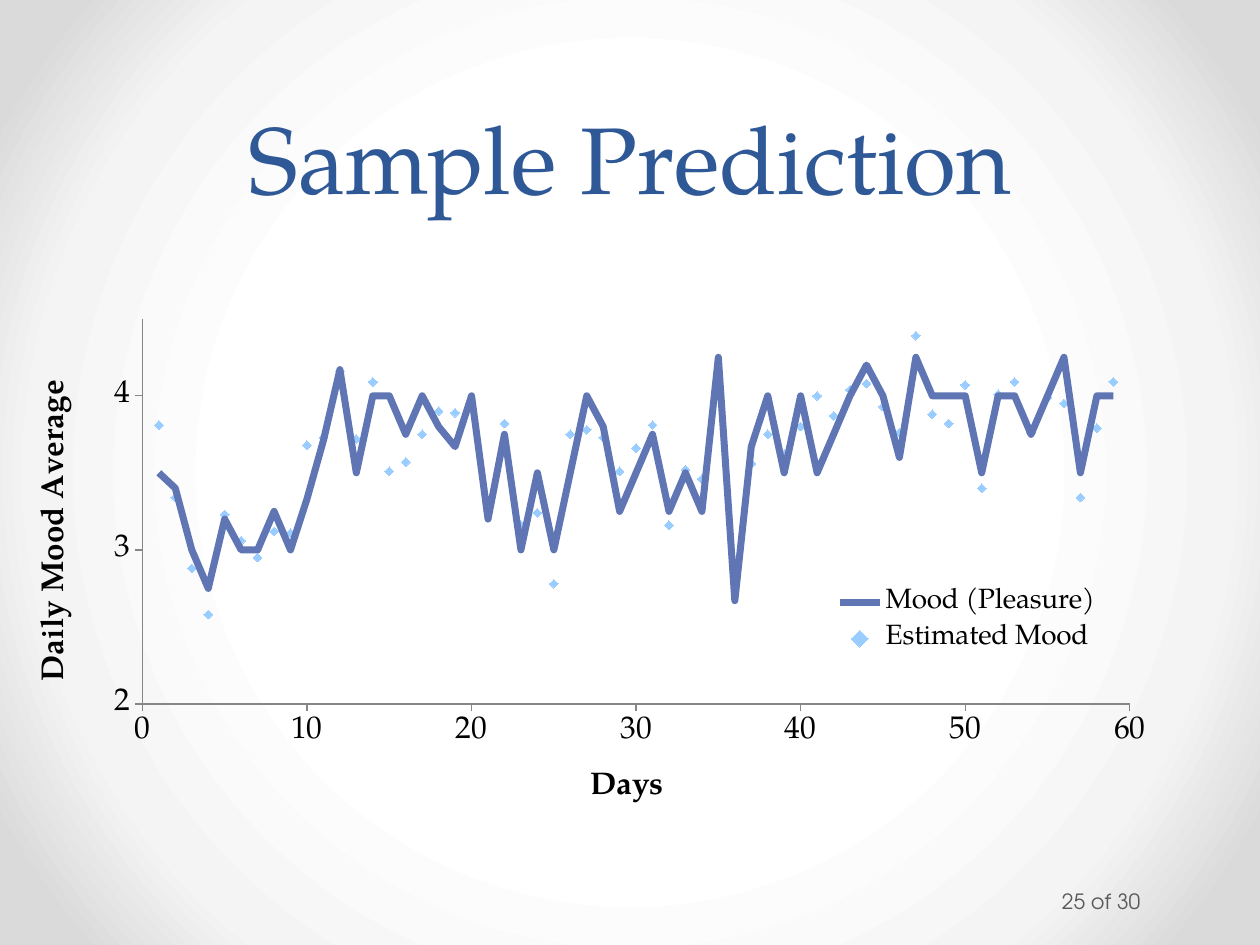
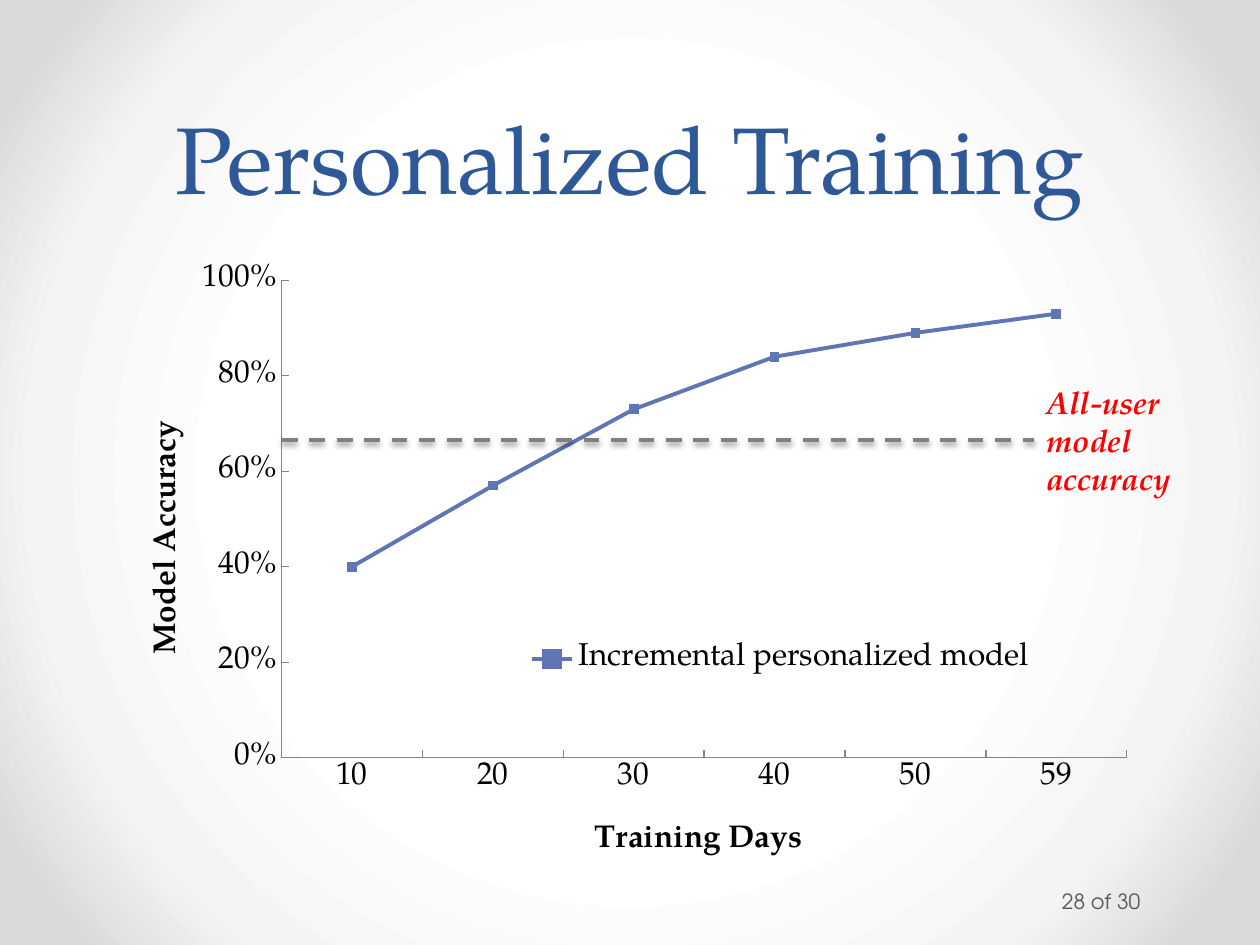
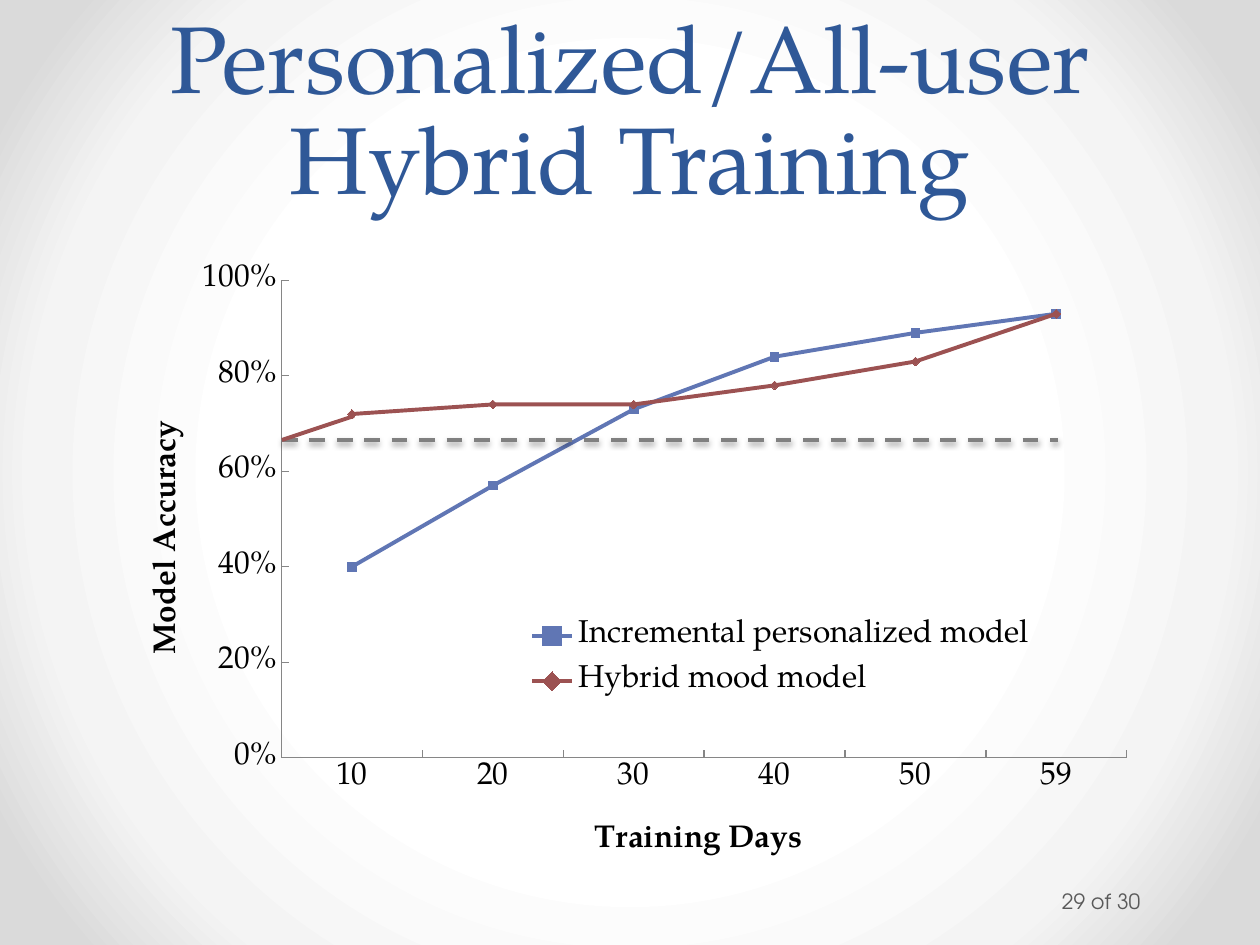
from lxml import etree
from pptx import Presentation
from pptx.chart.data import CategoryChartData, XyChartData
from pptx.dml.color import RGBColor
from pptx.enum.chart import (XL_CHART_TYPE as ChartType, XL_LEGEND_POSITION as LegendSide,
                             XL_MARKER_STYLE as Marker, XL_TICK_MARK as Tick)
from pptx.enum.dml import MSO_LINE
from pptx.enum.shapes import MSO_CONNECTOR
from pptx.enum.text import MSO_ANCHOR as Anchor, PP_ALIGN as Align
from pptx.oxml import parse_xml
from pptx.oxml.ns import nsdecls, qn
from pptx.util import Emu, Pt

PX = 914400 / 126
SERIF, SANS = "TeX Gyre Pagella", "TeX Gyre Adventor"
TITLE_BLUE = RGBColor(0x2F, 0x58, 0x97)
SERIES_BLUE = RGBColor(0x60, 0x76, 0xB4)
SERIES_RED = RGBColor(0x9C, 0x52, 0x52)
SKY = RGBColor(0x99, 0xCC, 0xFF)
RED = RGBColor(0xFF, 0x00, 0x00)
BLACK = RGBColor(0x00, 0x00, 0x00)
AXIS_GREY = RGBColor(0x86, 0x86, 0x86)
DASH_GREY = RGBColor(0x80, 0x80, 0x80)
PAGE_GREY = RGBColor(0x59, 0x59, 0x59)


def add_text(slide, box, text, font_name, size, color, anchor=Anchor.TOP):
    """Add a text box at box (left, top, width, height in px)."""
    frame = slide.shapes.add_textbox(*[Emu(round(n * PX)) for n in box]).text_frame
    frame.word_wrap = True
    frame.vertical_anchor = anchor
    paragraph = frame.paragraphs[0]
    paragraph.text = text
    for run in paragraph.runs:
        run.font.name, run.font.size = font_name, Pt(size)
        run.font.color.rgb = color
    return frame


def place(element, index, target, **fractions):
    """Give a chart part a manual layout in fractions of the chart."""
    for old in element.findall(qn("c:layout")):
        element.remove(old)
    layout = parse_xml(f"<c:layout {nsdecls('c')}><c:manualLayout/></c:layout>")
    settings = {"layoutTarget": target} if target else {}
    settings.update(xMode="edge", yMode="edge", **fractions)
    for tag, value in settings.items():
        etree.SubElement(layout[0], qn(f"c:{tag}")).set("val", str(value))
    element.insert(index, layout)


prs = Presentation()
prs.slide_width, prs.slide_height = Emu(round(1260 * PX)), Emu(round(945 * PX))

# Shared background: white centre fading to grey corners
master = prs.slide_master
master.background.fill.gradient()
gradient = master.element.find(".//" + qn("a:gradFill"))
stops = "".join(f'<a:gs pos="{pos}000"><a:srgbClr val="{color}"/></a:gs>'
                for pos, color in ((50, "FFFFFF"), (76, "F4F4F4"), (92, "DADADA")))
gradient.getparent().replace(gradient, parse_xml(
    f'<a:gradFill {nsdecls("a")} rotWithShape="1"><a:gsLst>{stops}</a:gsLst>'
    '<a:path path="circle"><a:fillToRect l="50000" t="50000" r="50000" b="50000"/>'
    '</a:path></a:gradFill>'))

# Mood data, one value a day
actual_mood = [
    3.5, 3.4, 3, 2.75, 3.2, 3, 3, 3.25, 3, 3.33, 3.71, 4.17, 3.5, 4, 4, 3.75, 4, 3.8, 3.67, 4,
    3.2, 3.75, 3, 3.5, 3, 3.5, 4, 3.8, 3.25, 3.5, 3.75, 3.25, 3.5, 3.25, 4.25, 2.67, 3.67, 4,
    3.5, 4, 3.5, 3.75, 4, 4.2, 4, 3.6, 4.25, 4, 4, 4, 3.5, 4, 4, 3.75, 4, 4.25, 3.5, 4, 4]
estimated_mood = [
    3.81, 3.34, 2.88, 2.58, 3.23, 3.06, 2.95, 3.12, 3.11, 3.68, 3.73, 4.16, 3.72, 4.09, 3.51,
    3.57, 3.75, 3.9, 3.89, 3.95, 3.25, 3.82, 3.16, 3.24, 2.78, 3.75, 3.78, 3.73, 3.51, 3.66,
    3.81, 3.16, 3.52, 3.46, 4.15, 2.81, 3.56, 3.75, 3.62, 3.8, 4, 3.87, 4.04, 4.08, 3.93, 3.76,
    4.39, 3.88, 3.82, 4.07, 3.4, 4.01, 4.09, 3.76, 3.99, 3.95, 3.34, 3.79, 4.09]
mood_data = XyChartData()
for name, moods in (("Mood (Pleasure)", actual_mood), ("Estimated Mood", estimated_mood)):
    series_data = mood_data.add_series(name)
    for day, mood in enumerate(moods, 1):
        series_data.add_data_point(day, mood)

# Accuracy data; the hybrid model joins on the last slide
accuracy_series = [("Incremental personalized model", [0.4, 0.57, 0.73, 0.84, 0.89, 0.93]),
                   ("Hybrid mood model", [0.72, 0.74, 0.74, 0.78, 0.83, 0.93])]
accuracy_data = []
for count in (1, 2):
    data = CategoryChartData(number_format="0%")
    data.categories = [10, 20, 30, 40, 50, 59]
    for name, accuracies in accuracy_series[:count]:
        data.add_series(name, accuracies)
    accuracy_data.append(data)

# Chart designs: box in px, layouts in fractions of the chart
mood_design = dict(
    kind=ChartType.XY_SCATTER_LINES_NO_MARKERS, box=(20, 300, 1177, 512),
    plot=dict(x=0.104, y=0.037, w=0.839, h=0.757),
    legend=dict(x=0.69, y=0.55, w=0.23, h=0.16), legend_side=LegendSide.RIGHT, legend_size=16,
    x_title=("Days", 0.48, 0.91), y_title=("Daily Mood Average", 0.01, 0.15),
    y_scale=(2, 4.5, 1), y_format="General", tick=Tick.OUTSIDE)
accuracy_design = dict(
    kind=ChartType.LINE_MARKERS, box=(123, 249, 1036, 616),
    plot=dict(x=0.153, y=0.051, w=0.816, h=0.775),
    legend=dict(x=0.39, y=0.58, w=0.49, h=0.17), legend_side=LegendSide.BOTTOM, legend_size=18,
    x_title=("Training Days", 0.45, 0.92), y_title=("Model Accuracy", 0.02, 0.27),
    y_scale=(0, 1, 0.2), y_format="0%", tick=Tick.INSIDE)

pages = [("Sample Prediction", 25, mood_design, mood_data),
         ("Personalized Training", 28, accuracy_design, accuracy_data[0]),
         ("Personalized/All-user\vHybrid Training", 29, accuracy_design, accuracy_data[1])]
slides = []

for heading, number, design, data in pages:
    slide = prs.slides.add_slide(prs.slide_layouts[6])
    slides.append(slide)

    # Title
    title = add_text(slide, (63, 0, 1134, 220), heading, SERIF, 54, TITLE_BLUE, Anchor.BOTTOM)
    title.paragraphs[0].alignment = Align.CENTER
    title.paragraphs[0].line_spacing = Pt(58)

    # Chart, plot area and legend
    box = [Emu(round(n * PX)) for n in design["box"]]
    chart = slide.shapes.add_chart(design["kind"], *box, data).chart
    chart.has_title = False
    chart.has_legend = True
    legend = chart.legend
    legend.position = design["legend_side"]
    legend.include_in_layout = False
    for font, size in ((chart.font, 18), (legend.font, design["legend_size"])):
        font.name, font.size = SERIF, Pt(size)
        font.color.rgb = BLACK
    place(chart._chartSpace.chart.plotArea, 0, "inner", **design["plot"])
    place(legend._element, 1, None, **design["legend"])

    # Axes
    days, level = chart.category_axis, chart.value_axis
    for axis, (caption, x, y) in ((days, design["x_title"]), (level, design["y_title"])):
        axis.has_major_gridlines = False
        axis.major_tick_mark, axis.minor_tick_mark = design["tick"], Tick.NONE
        axis.format.line.color.rgb = AXIS_GREY
        axis.format.line.width = Pt(0.75)
        caption_frame = axis.axis_title.text_frame
        caption_frame.text = caption
        font = caption_frame.paragraphs[0].runs[0].font
        font.name, font.size, font.bold = SERIF, Pt(18), True
        font.color.rgb = BLACK
        place(axis.axis_title._element, 1, None, x=x, y=y)
    caption_frame._txBody.bodyPr.set("rot", "-5400000")
    caption_frame._txBody.bodyPr.set("vert", "horz")
    level.minimum_scale, level.maximum_scale, level.major_unit = design["y_scale"]
    level.tick_labels.number_format = design["y_format"]
    level.tick_labels.number_format_is_linked = False

    # Series
    plot = chart.plots[0]
    plot.vary_by_categories = False
    if design is mood_design:
        days.minimum_scale, days.maximum_scale, days.major_unit = 0, 60, 10
        looks = [(SERIES_BLUE, 4, Marker.NONE), (SKY, 0, Marker.DIAMOND)]
    else:
        looks = [(SERIES_BLUE, 2.25, Marker.SQUARE), (SERIES_RED, 2.25, Marker.DIAMOND)]
        for series in plot.series:
            series.smooth = False
    for series, (color, width, marker_style) in zip(plot.series, looks):
        if width:
            series.format.line.color.rgb = color
            series.format.line.width = Pt(width)
        else:
            series.format.line.fill.background()
        marker = series.marker
        marker.style = marker_style
        if marker_style != Marker.NONE:
            marker.size = 5
            marker.format.fill.solid()
            marker.format.fill.fore_color.rgb = color
            marker.format.line.fill.background()

    # Page number
    page = add_text(slide, (1058, 876, 154, 50), f"{number} of 30", SANS, 12, PAGE_GREY,
                    Anchor.MIDDLE)
    page.margin_left = Emu(round(4 * PX))
    page.margin_right = Emu(round(6 * PX))

# All-user accuracy level, and the hybrid model's start from it
_, personalized, hybrid = slides
for slide, end, color, is_level in ((personalized, (1034, 440), DASH_GREY, True),
                                    (hybrid, (1058, 440), DASH_GREY, True),
                                    (hybrid, (354, 416), SERIES_RED, False)):
    ends = [Emu(round(n * PX)) for n in (282, 440, *end)]
    connector = slide.shapes.add_connector(MSO_CONNECTOR.STRAIGHT, *ends)
    connector.line.color.rgb = color
    connector.line.width = Pt(2.25)
    effects = etree.SubElement(connector._element.spPr, qn("a:effectLst"))
    if is_level:
        connector.line.dash_style = MSO_LINE.DASH
        effects.append(parse_xml(
            f'<a:outerShdw {nsdecls("a")} blurRad="40000" dist="20000" dir="5400000" '
            'rotWithShape="0"><a:srgbClr val="000000"><a:alpha val="38000"/></a:srgbClr>'
            '</a:outerShdw>'))

# Label of the all-user level
label = add_text(personalized, (1034, 377, 159, 127), "All-user \vmodel\vaccuracy",
                 SERIF, 18, RED)
label.word_wrap = False
for run in label.paragraphs[0].runs:
    run.font.bold = run.font.italic = True

prs.save("out.pptx")
